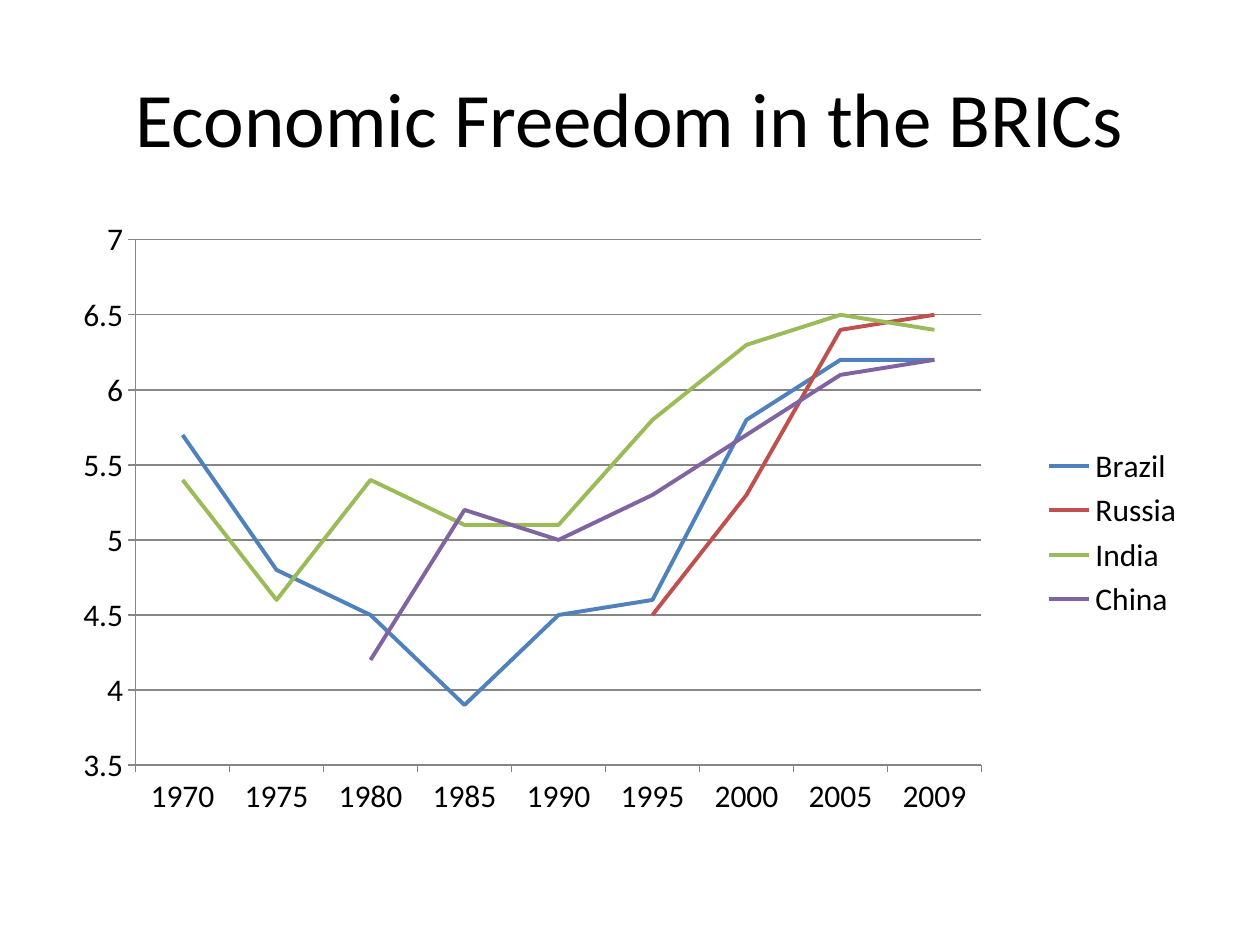
import pptx
import pptx.chart.data
import pptx.dml.color
import pptx.enum.chart
import pptx.enum.text
import pptx.oxml
import pptx.oxml.ns
import pptx.util
from pptx.util import Cm

COLORS = {
    "text": "000000",
    "axis": "868686",
    "Brazil": "4F81BD",
    "Russia": "C0504D",
    "India": "9BBB59",
    "China": "8064A2",
}
FONT = "Calibri"
YEARS = ["1970", "1975", "1980", "1985", "1990", "1995", "2000", "2005", "2009"]
FREEDOM_SCORES = {
    "Brazil": [5.7, 4.8, 4.5, 3.9, 4.5, 4.6, 5.8, 6.2, 6.2],
    "Russia": [None] * 5 + [4.5, 5.3, 6.4, 6.5],
    "India": [5.4, 4.6, 5.4, 5.1, 5.1, 5.8, 6.3, 6.5, 6.4],
    "China": [None] * 2 + [4.2, 5.2, 5, 5.3, 5.7, 6.1, 6.2],
}
PLOT_AREA = {"x": 0.064, "y": 0.03, "w": 0.746, "h": 0.843}


def rgb(name):
    """Return the named colour."""
    return pptx.dml.color.RGBColor.from_string(COLORS[name])


def format_font(font, size, color="text"):
    """Set the typeface, size and colour of a font."""
    font.name = FONT
    font.size = pptx.util.Pt(size)
    font.color.rgb = rgb(color)


def format_line(line, color, width):
    """Set the colour and width of a line."""
    line.color.rgb = rgb(color)
    line.width = pptx.util.Pt(width)


def add_text(slide, box, text, size=18, color="text", align="CENTER", anchor="MIDDLE"):
    """Add a wrapped text box with one formatted paragraph."""
    frame = slide.shapes.add_textbox(*box).text_frame
    frame.word_wrap = True
    frame.vertical_anchor = getattr(pptx.enum.text.MSO_ANCHOR, anchor)
    paragraph = frame.paragraphs[0]
    paragraph.alignment = getattr(pptx.enum.text.PP_ALIGN, align)
    run = paragraph.add_run()
    run.text = text
    format_font(run.font, size, color)


def set_plot_layout(chart, fractions):
    """Fix the inner plot area as fractions of the chart."""
    plot_area = chart.element.find(".//" + pptx.oxml.ns.qn("c:plotArea"))
    for layout in plot_area.findall(pptx.oxml.ns.qn("c:layout")):
        plot_area.remove(layout)
    modes = '<c:layoutTarget val="inner"/><c:xMode val="edge"/><c:yMode val="edge"/>'
    values = "".join(f'<c:{key} val="{value}"/>' for key, value in fractions.items())
    plot_area.insert(0, pptx.oxml.parse_xml(
        f'<c:layout {pptx.oxml.ns.nsdecls("c")}>'
        f"<c:manualLayout>{modes}{values}</c:manualLayout></c:layout>"))


def format_axes(chart):
    """Style both axes and the horizontal gridlines."""
    for axis in (chart.category_axis, chart.value_axis):
        axis.major_tick_mark = pptx.enum.chart.XL_TICK_MARK.OUTSIDE
        axis.minor_tick_mark = pptx.enum.chart.XL_TICK_MARK.NONE
        format_line(axis.format.line, "axis", 0.75)
    value_axis = chart.value_axis
    value_axis.minimum_scale = 3.5
    value_axis.maximum_scale = 7
    value_axis.major_unit = 0.5
    value_axis.has_major_gridlines = True
    format_line(value_axis.major_gridlines.format.line, "axis", 0.75)
    value_axis.tick_labels.number_format = "General"
    value_axis.tick_labels.number_format_is_linked = False


def add_freedom_chart(slide, box):
    """Add the line chart of economic freedom by country."""
    data = pptx.chart.data.CategoryChartData()
    data.categories = YEARS
    for country, scores in FREEDOM_SCORES.items():
        data.add_series(country, scores)
    chart = slide.shapes.add_chart(
        pptx.enum.chart.XL_CHART_TYPE.LINE, *box, data).chart
    format_font(chart.font, 18)
    chart.has_title = False
    chart.has_legend = True
    chart.legend.position = pptx.enum.chart.XL_LEGEND_POSITION.RIGHT
    chart.legend.include_in_layout = False
    chart.plots[0].vary_by_categories = False
    for series in chart.plots[0].series:
        series.smooth = False
        series.marker.style = pptx.enum.chart.XL_MARKER_STYLE.NONE
        format_line(series.format.line, series.name, 2.25)
    format_axes(chart)
    set_plot_layout(chart, PLOT_AREA)


def build_chart_slide(presentation, box):
    """Add a slide with a title above a chart inside the given box."""
    left, top, width, height = box
    title_height = Cm(3.18)
    chart_height = Cm(12.57)
    slide = presentation.slides.add_slide(presentation.slide_layouts[6])
    add_text(slide, (left, top, width, title_height),
             "Economic Freedom in the BRICs", size=44)
    add_freedom_chart(
        slide, (left, top + height - chart_height, width, chart_height))


def main():
    """Build and save the presentation."""
    presentation = pptx.Presentation()
    presentation.slide_width = Cm(25.4)
    presentation.slide_height = Cm(19.05)
    build_chart_slide(presentation, (Cm(1.27), Cm(0.76), Cm(22.86), Cm(16.26)))
    presentation.save("out.pptx")


if __name__ == "__main__":
    main()
